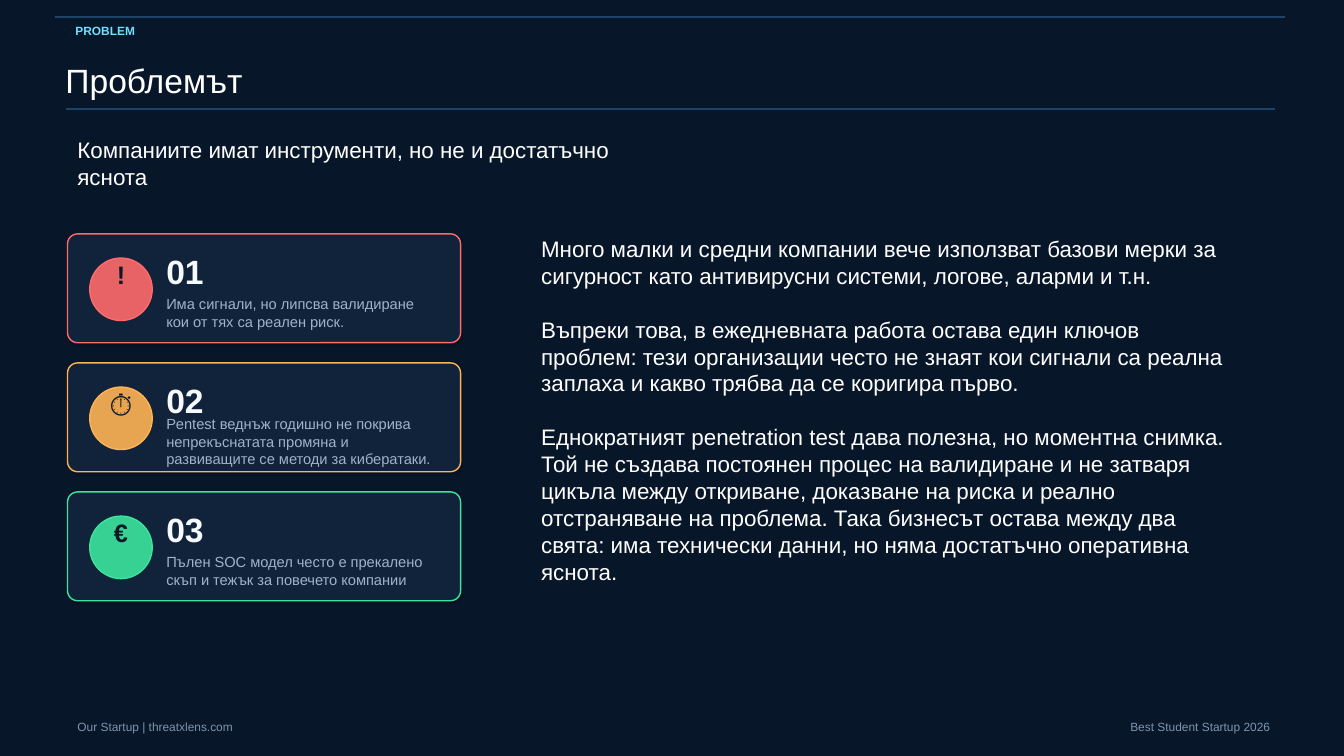
from dataclasses import dataclass

from lxml import etree
from pptx import Presentation
from pptx.dml.color import RGBColor
from pptx.enum.shapes import MSO_CONNECTOR, MSO_SHAPE
from pptx.enum.text import MSO_ANCHOR, PP_ALIGN
from pptx.oxml.ns import qn
from pptx.util import Pt

ROUNDED, ELLIPSE = MSO_SHAPE.ROUNDED_RECTANGLE, MSO_SHAPE.OVAL
STRAIGHT = MSO_CONNECTOR.STRAIGHT
MIDDLE = MSO_ANCHOR.MIDDLE
LEFT, CENTER, RIGHT = PP_ALIGN.LEFT, PP_ALIGN.CENTER, PP_ALIGN.RIGHT

FONT = "Arial"
COLORS = {
    "background": "081629", "rule": "1E4368", "section": "72DFFF",
    "white": "FFFFFF", "card": "10233B", "icon": "0B1828",
    "number": "F6FAFF", "detail": "9EB3C8", "footer": "7E95AF",
    "red": "FF6B6B", "amber": "FFB454", "green": "3CE49D", "shadow": "000000",
}
CARD_LEFT, CARD_TOP, CARD_PITCH = 48.24, 167.04, 92.16
CARD_WIDTH, CARD_HEIGHT = 280.8, 77.76
BADGE_SIZE = 44.64
BODY_LINE = 19.2


@dataclass(frozen=True)
class Box:
    left: float
    top: float
    width: float
    height: float

    def lengths(self) -> list[Pt]:
        return [Pt(v) for v in (self.left, self.top, self.width, self.height)]


@dataclass(frozen=True)
class Label:
    box: Box
    paragraphs: tuple[str, ...]
    size: float
    color: str
    bold: bool = False
    align: PP_ALIGN = LEFT
    inset: bool = True
    gap: float = 0
    room_below: float = 0


@dataclass(frozen=True)
class Card:
    icon: str
    detail: str
    color: str


@dataclass(frozen=True)
class Rule:
    left: float
    right: float
    top: float


def rgb(name: str) -> RGBColor:
    return RGBColor.from_string(COLORS[name])


def add_rule(slide, rule: Rule) -> None:
    connector = slide.shapes.add_connector(
        STRAIGHT, Pt(rule.left), Pt(rule.top), Pt(rule.right), Pt(rule.top))
    connector.line.color.rgb = rgb("rule")
    connector.line.width = Pt(1)
    etree.SubElement(connector._element.spPr, qn("a:effectLst"))


def add_label(slide, label: Label) -> None:
    frame = slide.shapes.add_textbox(*label.box.lengths()).text_frame
    frame.word_wrap = True
    frame.vertical_anchor = MIDDLE
    side, edge = (7.2, 3.6) if label.inset else (0, 0)
    frame.margin_left = frame.margin_right = Pt(side)
    frame.margin_top = Pt(edge)
    frame.margin_bottom = Pt(edge + label.room_below)
    for index, text in enumerate(label.paragraphs):
        paragraph = frame.add_paragraph() if index else frame.paragraphs[0]
        paragraph.text = text
        paragraph.alignment = label.align
        if index:
            paragraph.space_before = Pt(label.gap)
        paragraph.font.name = FONT
        paragraph.font.size = Pt(label.size)
        paragraph.font.bold = label.bold
        paragraph.font.color.rgb = rgb(label.color)


def add_panel(slide, kind: MSO_SHAPE, box: Box, fill: str, line: str):
    panel = slide.shapes.add_shape(kind, *box.lengths())
    panel.shadow.inherit = False
    panel.fill.solid()
    panel.fill.fore_color.rgb = rgb(fill)
    panel.line.color.rgb = rgb(line)
    panel.line.width = Pt(1)
    return panel


def set_alpha(color_element, percent: int) -> None:
    etree.SubElement(color_element, qn("a:alpha"), val=str(percent * 1000))


def add_card(slide, card: Card, index: int) -> None:
    top = CARD_TOP + index * CARD_PITCH
    badge_left, text_left = CARD_LEFT + 15.84, CARD_LEFT + 70.56

    # Frame with a soft shadow
    frame = add_panel(slide, ROUNDED, Box(CARD_LEFT, top, CARD_WIDTH, CARD_HEIGHT),
                      "card", card.color)
    frame.adjustments[0] = 0.093
    effects = frame._element.spPr.find(qn("a:effectLst"))
    shadow = etree.SubElement(
        effects, qn("a:outerShdw"), blurRad=str(Pt(1.2)), dist=str(Pt(1)),
        dir=str(45 * 60000), algn="ctr", rotWithShape="0")
    set_alpha(etree.SubElement(shadow, qn("a:srgbClr"), val=COLORS["shadow"]), 18)

    # Round badge
    badge = add_panel(slide, ELLIPSE, Box(badge_left, top + 17.28, BADGE_SIZE, BADGE_SIZE),
                      card.color, card.color)
    set_alpha(badge._element.spPr.find(qn("a:solidFill"))[0], 90)

    # Icon, number and detail
    add_label(slide, Label(Box(badge_left, top + 18.72, BADGE_SIZE, 20.16),
                           (card.icon,), 18, "icon", True, CENTER, False))
    add_label(slide, Label(Box(text_left, top + 14.4, 194.4, 24.48),
                           (f"{index + 1:02}",), 24, "number", True, inset=False))
    add_label(slide, Label(Box(text_left, top + 43.2, 194.4, 25.92),
                           (card.detail,), 10.5, "detail", inset=False))


RULES = (Rule(39.6, 918, 12.24), Rule(46.8, 910.8, 77.76))

BODY = (
    "Много малки и средни компании вече използват базови мерки за сигурност "
    "като антивирусни системи, логове, аларми и т.н.",
    "Въпреки това, в ежедневната работа остава един ключов проблем: тези "
    "организации често не знаят кои сигнали са реална заплаха и какво трябва "
    "да се коригира първо.",
    "Еднократният penetration test дава полезна, но моментна снимка. Той не "
    "създава постоянен процес на валидиране и не затваря цикъла между "
    "откриване, доказване на риска и реално отстраняване на проблема. Така "
    "бизнесът остава между два свята: има технически данни, но няма "
    "достатъчно оперативна яснота.",
)

LABELS = (
    Label(Box(46.8, 17.28, 252, 10.08), ("PROBLEM",), 8.5, "section", True),
    Label(Box(46.8, 41.76, 633.6, 30.24), ("Проблемът",), 24, "white", inset=False),
    Label(Box(48.24, 98.64, 432, 36),
          ("Компаниите имат инструменти, но не и достатъчно яснота",), 16, "white"),
    Label(Box(379.44, 169.92, 502.56, 264.96), BODY, 16, "white",
          gap=BODY_LINE, room_below=BODY_LINE),
    Label(Box(48.24, 512.64, 468, 12.96),
          ("Our Startup | threatxlens.com",), 8.5, "footer"),
    Label(Box(727.2, 512.64, 187.2, 12.96),
          ("Best Student Startup 2026",), 8.5, "footer", align=RIGHT),
)

CARDS = (
    Card("!", "Има сигнали, но липсва валидиране кои от тях са реален риск.", "red"),
    Card("⏱", "Pentest веднъж годишно не покрива непрекъснатата промяна и "
              "развиващите се методи за кибератаки.", "amber"),
    Card("€", "Пълен SOC модел често е прекалено скъп и тежък за повечето компании",
         "green"),
)


def main() -> None:
    deck = Presentation()
    deck.slide_width, deck.slide_height = Pt(960), Pt(540)
    slide = deck.slides.add_slide(deck.slide_layouts[6])
    slide.background.fill.solid()
    slide.background.fill.fore_color.rgb = rgb("background")

    for rule in RULES:
        add_rule(slide, rule)
    for label in LABELS:
        add_label(slide, label)
    for index, card in enumerate(CARDS):
        add_card(slide, card, index)

    deck.save("out.pptx")


if __name__ == "__main__":
    main()
